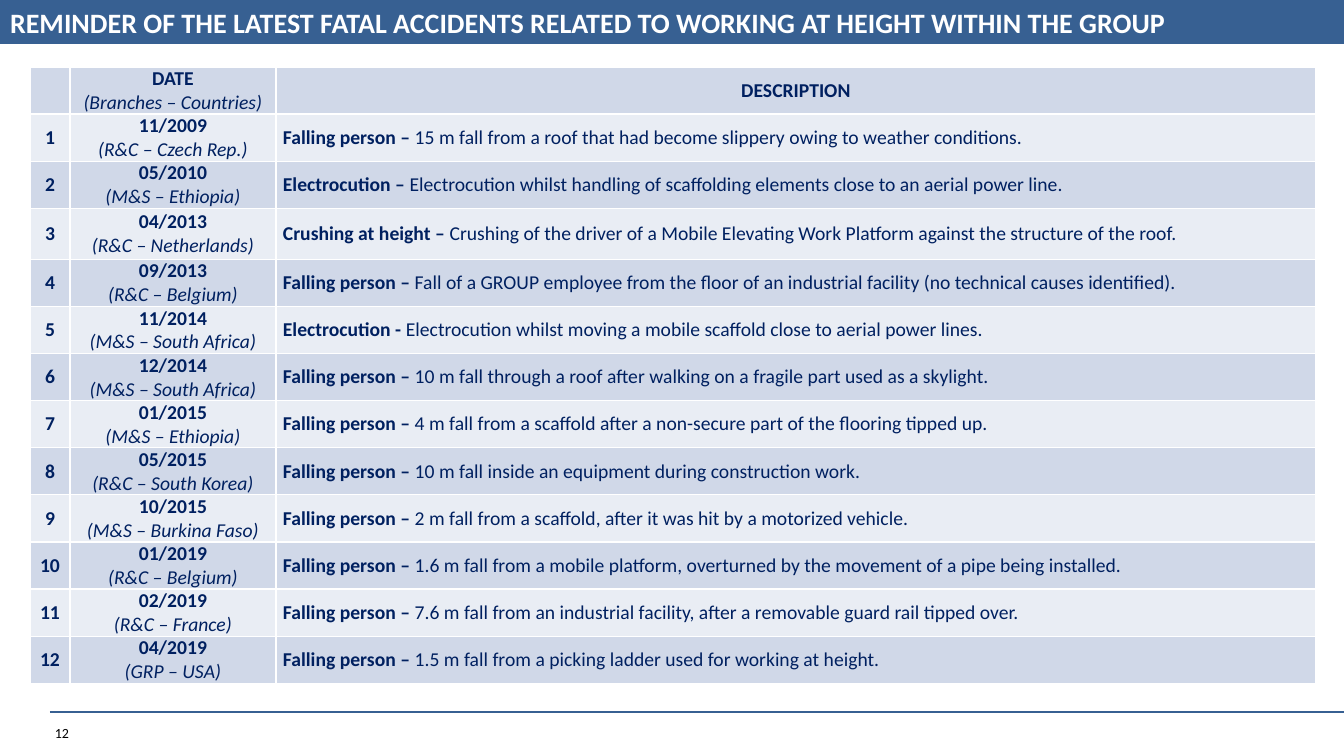
"""Build the slide that lists fatal accidents related to working at height."""
import pptx
import pptx.dml.color
import pptx.enum.shapes
import pptx.enum.text
import pptx.oxml
import pptx.oxml.ns
import pptx.util
import lxml.etree

PX = 914400 / 100.8
BLUE = pptx.dml.color.RGBColor(0x37, 0x60, 0x92)
NAVY = pptx.dml.color.RGBColor(0x00, 0x20, 0x60)
WHITE = pptx.dml.color.RGBColor(0xFF, 0xFF, 0xFF)
BLACK = pptx.dml.color.RGBColor(0x00, 0x00, 0x00)
DARK_BAND = pptx.dml.color.RGBColor(0xD0, 0xD8, 0xE8)
LIGHT_BAND = pptx.dml.color.RGBColor(0xE9, 0xED, 0xF4)
CENTER = pptx.enum.text.PP_ALIGN.CENTER
LEFT = pptx.enum.text.PP_ALIGN.LEFT
MIDDLE = pptx.enum.text.MSO_ANCHOR.MIDDLE

ACCIDENTS = [
    ("11/2009", "R&C – Czech Rep.", "Falling person – ",
     "15 m fall from a roof that had become slippery owing to weather conditions."),
    ("05/2010", "M&S – Ethiopia", "Electrocution – ",
     "Electrocution whilst handling of scaffolding elements close to an aerial power line."),
    ("04/2013", "R&C – Netherlands", "Crushing at height – ",
     "Crushing of the driver of a Mobile Elevating Work Platform against the structure of the roof."),
    ("09/2013", "R&C – Belgium", "Falling person – ",
     "Fall of a GROUP employee from the floor of an industrial facility (no technical causes identified)."),
    ("11/2014", "M&S – South Africa", "Electrocution - ",
     "Electrocution whilst moving a mobile scaffold close to aerial power lines."),
    ("12/2014", "M&S – South Africa", "Falling person – ",
     "10 m fall through a roof after walking on a fragile part used as a skylight."),
    ("01/2015", "M&S – Ethiopia", "Falling person – ",
     "4 m fall from a scaffold after a non-secure part of the flooring tipped up."),
    ("05/2015", "R&C – South Korea", "Falling person – ",
     "10 m fall inside an equipment during construction work."),
    ("10/2015", "M&S – Burkina Faso", "Falling person – ",
     "2 m fall from a scaffold, after it was hit by a motorized vehicle."),
    ("01/2019", "R&C – Belgium", "Falling person – ",
     "1.6 m fall from a mobile platform, overturned by the movement of a pipe being installed."),
    ("02/2019", "R&C – France", "Falling person – ",
     "7.6 m fall from an industrial facility, after a removable guard rail tipped over."),
    ("04/2019", "GRP – USA", "Falling person – ",
     "1.5 m fall from a picking ladder used for working at height."),
]


def px(*lengths):
    """Turn pixel lengths into EMU."""
    return [pptx.util.Emu(round(length * PX)) for length in lengths]


def write(para, text, color=NAVY, **formats):
    """Add a formatted span to a paragraph."""
    span = para.add_run()
    span.text = text
    span.font.color.rgb = color
    for name, value in {"name": "Calibri", "size": pptx.util.Pt(14), **formats}.items():
        setattr(span.font, name, value)


deck = pptx.Presentation()
deck.slide_width, deck.slide_height = px(1344, 756)
page = deck.slides.add_slide(deck.slide_layouts[5])

title = page.shapes.title
title.left, title.top, title.width, title.height = px(0, 0, 1252, 44)
title.text_frame.auto_size = pptx.enum.text.MSO_AUTO_SIZE.NONE
title.text_frame.vertical_anchor = MIDDLE
title.text_frame.paragraphs[0].alignment = LEFT
write(title.text_frame.paragraphs[0],
      "REMINDER OF THE LATEST FATAL ACCIDENTS RELATED TO WORKING AT HEIGHT WITHIN THE GROUP",
      WHITE, size=pptx.util.Pt(20), bold=True)

band = page.shapes.add_shape(pptx.enum.shapes.MSO_SHAPE.RECTANGLE, *px(0, 0, 1344, 44))
band.shadow.inherit = False
band.fill.solid()
band.fill.fore_color.rgb = BLUE
band.line.fill.background()
title._element.addprevious(band._element)

footer_line = page.shapes.add_connector(
    pptx.enum.shapes.MSO_CONNECTOR.STRAIGHT, *px(50, 712, 1344, 712))
footer_line.line.color.rgb = BLUE
footer_line.line.width = pptx.util.Pt(0.75)
lxml.etree.SubElement(footer_line._element.spPr, pptx.oxml.ns.qn("a:effectLst"))

number_box = page.shapes.add_textbox(*px(45, 720, 72, 27))
number_box.text_frame.word_wrap = True
write(number_box.text_frame.paragraphs[0], "12", BLACK, size=pptx.util.Pt(10))

table = page.shapes.add_table(len(ACCIDENTS) + 1, 3, *px(30, 67, 1286, 615)).table
table.first_row = table.horz_banding = False
for column, width in zip(table.columns, px(40, 206, 1040)):
    column.width = width
for row in table.rows:
    row.height = px(47)[0]
table.rows[3].height = px(51)[0]

lines = [("", "DATE", "Branches – Countries", "DESCRIPTION", "")]
lines += [(str(number), *accident) for number, accident in enumerate(ACCIDENTS, 1)]
for index, (number, date, place, cause, description) in enumerate(lines):
    cells = [table.cell(index, column) for column in range(3)]
    for cell in cells:
        cell.vertical_anchor = MIDDLE
        cell.margin_left, cell.margin_top, cell.margin_right, cell.margin_bottom = px(7, 0, 7, 0)
        for side in ("lnL", "lnR", "lnT", "lnB"):
            cell._tc.get_or_add_tcPr().append(pptx.oxml.parse_xml(
                f'<a:{side} {pptx.oxml.ns.nsdecls("a")} w="12700"><a:solidFill>'
                f'<a:srgbClr val="{WHITE}"/></a:solidFill></a:{side}>'))
        cell.fill.solid()
        cell.fill.fore_color.rgb = LIGHT_BAND if index % 2 else DARK_BAND
    number_para, date_para, cause_para = [cell.text_frame.paragraphs[0] for cell in cells]
    place_para = cells[1].text_frame.add_paragraph()
    for para in (number_para, date_para, place_para):
        para.alignment = CENTER
    cause_para.alignment = LEFT if index else CENTER
    if number:
        write(number_para, number, bold=True)
    write(date_para, date, bold=True)
    write(place_para, f"({place})", italic=True)
    write(cause_para, cause, bold=True)
    if description:
        write(cause_para, description)

deck.save("out.pptx")
